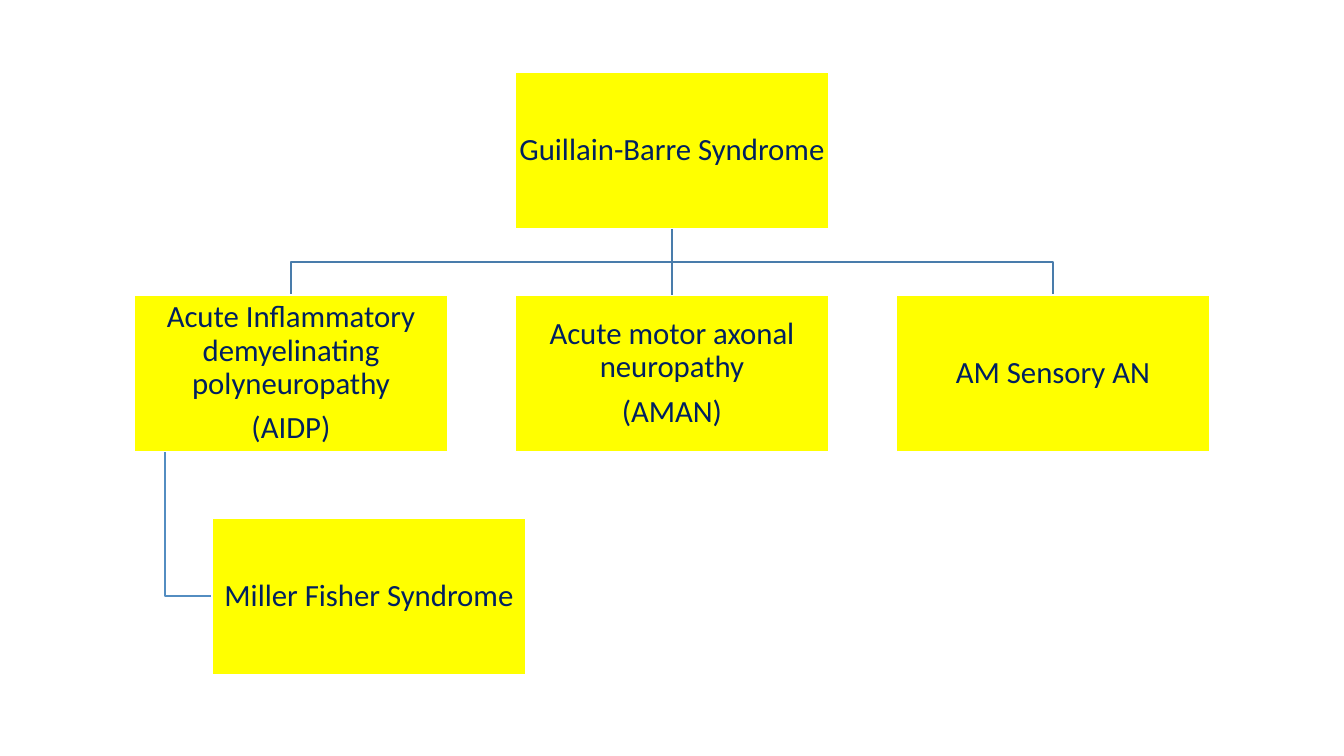
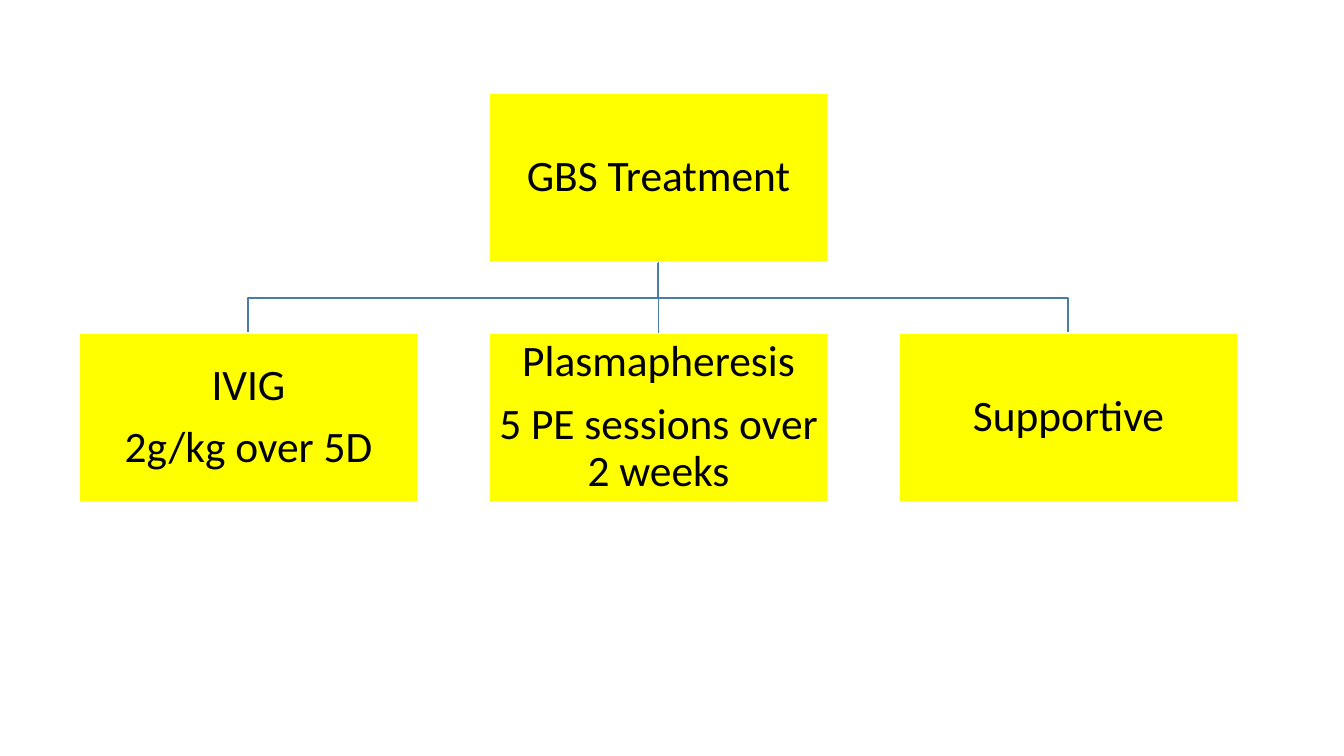
from lxml.etree import SubElement
from pptx import Presentation
from pptx.dml.color import RGBColor as RGB
from pptx.enum.shapes import MSO_CONNECTOR as CONN, MSO_SHAPE as SHAPE
from pptx.enum.text import MSO_ANCHOR as ANCHOR, PP_ALIGN as ALIGN
from pptx.oxml.ns import qn
from pptx.util import Emu, Pt

SCALE = 914400 / 100.8  # EMU in one px
FONT = "Calibri"
INSET = 2
COLORS = {"box": "FFFF00", "edge": "FFFFFF", "line": "497CAB",
          "sub": "538DC1", "navy": "002060", "black": "000000"}

# Each chart: box grid in px, text style, top box, row of boxes, sub-box
CHARTS = [
    {"left": 134, "top": 72, "width": 314, "height": 157,
     "across": 381, "down": 223, "size": 22, "color": "navy",
     "root": ["Guillain-Barre Syndrome"],
     "row": [["Acute Inflammatory demyelinating polyneuropathy", "(AIDP)"],
             ["Acute motor axonal neuropathy", "(AMAN)"],
             ["AM Sensory AN"]],
     "sub": ["Miller Fisher Syndrome"]},
    {"left": 79, "top": 93, "width": 339, "height": 169,
     "across": 410, "down": 240, "size": 31, "color": "black",
     "root": ["GBS Treatment"],
     "row": [["IVIG", "2g/kg over 5D"],
             ["Plasmapheresis", "5 PE sessions over 2 weeks"],
             ["Supportive"]],
     "sub": None},
]


def add_box(slide, chart, x, y, lines):
    """Add a yellow box with one centred paragraph per line."""
    sizes = (x, y, chart["width"], chart["height"])
    box = slide.shapes.add_shape(
        SHAPE.RECTANGLE, *[Emu(round(v * SCALE)) for v in sizes])
    box.shadow.inherit = False
    box.fill.solid()
    box.fill.fore_color.rgb = RGB.from_string(COLORS["box"])
    box.line.color.rgb = RGB.from_string(COLORS["edge"])
    box.line.width = Pt(1)
    frame = box.text_frame
    frame.word_wrap = True
    frame.vertical_anchor = ANCHOR.MIDDLE
    frame.margin_left = frame.margin_right = Emu(round(INSET * SCALE))
    frame.margin_top = frame.margin_bottom = Emu(round(INSET * SCALE))
    for i, line in enumerate(lines):
        para = frame.add_paragraph() if i else frame.paragraphs[0]
        para.alignment = ALIGN.CENTER
        para.line_spacing = 0.9
        para.space_after = Pt(round(chart["size"] * 0.35))
        run = para.add_run()
        run.text = line
        run.font.name = FONT
        run.font.size = Pt(chart["size"])
        run.font.color.rgb = RGB.from_string(COLORS[chart["color"]])
    return box


def add_bend(slide, points, color):
    """Add an open, bent line through the points."""
    pen = slide.shapes.build_freeform(*points[0], scale=SCALE)
    pen.add_line_segments(points[1:], close=False)
    bend = pen.convert_to_shape()
    bend.shadow.inherit = False
    bend.fill.background()
    bend.line.color.rgb = RGB.from_string(COLORS[color])
    bend.line.width = Pt(1)


deck = Presentation()
deck.slide_width = Emu(round(1344 * SCALE))
deck.slide_height = Emu(round(756 * SCALE))

for chart in CHARTS:
    slide = deck.slides.add_slide(deck.slide_layouts[6])
    left, top = chart["left"], chart["top"]
    width, height = chart["width"], chart["height"]
    across, down = chart["across"], chart["down"]
    row_top = top + down
    root_end = top + height
    mid_y = (root_end + row_top) / 2
    root_x = left + across + width / 2

    # Bent lines to the outer boxes
    for side in (-1, 1):
        end_x = root_x + side * across
        add_bend(slide, [(root_x, root_end), (root_x, mid_y),
                         (end_x, mid_y), (end_x, row_top)], "line")

    # Top box and the row below it
    root = add_box(slide, chart, left + across, top, chart["root"])
    row = [add_box(slide, chart, left + i * across, row_top, lines)
           for i, lines in enumerate(chart["row"])]

    # Straight line to the middle box
    link = slide.shapes.add_connector(CONN.STRAIGHT, 0, 0, 0, 0)
    link.begin_connect(root, 2)
    link.end_connect(row[1], 0)
    link.line.color.rgb = RGB.from_string(COLORS["line"])
    link.line.width = Pt(1)
    SubElement(link._element.spPr, qn("a:effectLst"))

    # Sub-box hanging from the first box
    if chart["sub"]:
        sub_x, sub_y = left + width // 4, row_top + down
        stem_x = left + width // 10
        end_y = sub_y + height / 2
        add_bend(slide, [(stem_x, row_top + height), (stem_x, end_y),
                         (sub_x, end_y)], "sub")
        add_box(slide, chart, sub_x, sub_y, chart["sub"])

deck.save("out.pptx")
